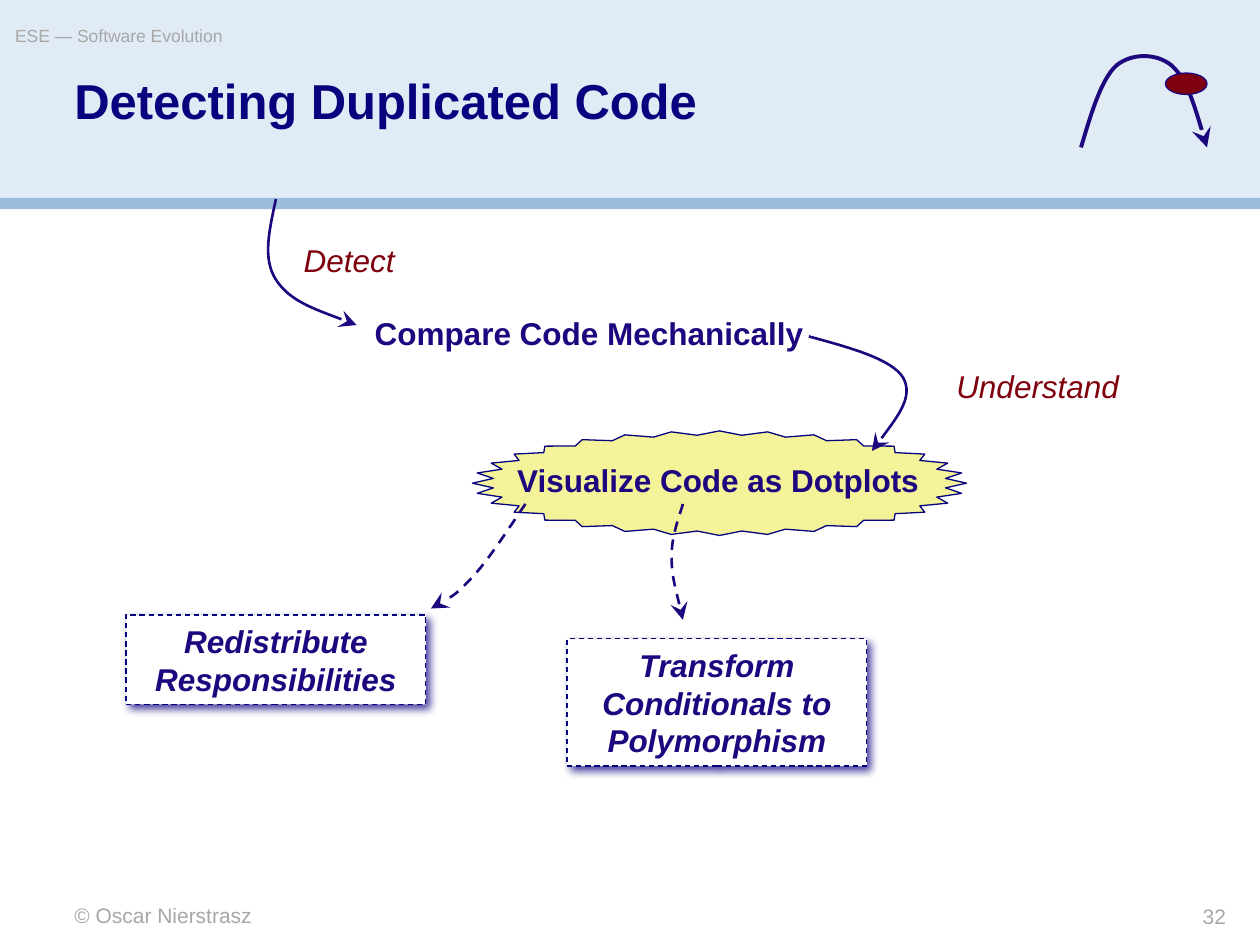
from lxml.etree import SubElement
from pptx import Presentation
from pptx.dml.color import RGBColor
from pptx.enum.dml import MSO_LINE
from pptx.enum.shapes import MSO_SHAPE
from pptx.enum.text import MSO_ANCHOR, MSO_AUTO_SIZE, PP_ALIGN
from pptx.oxml.ns import qn
from pptx.util import Cm, Pt

COLORS = {
    "header": "E1EBF5", "rule": "9CBDDE", "star": "F5F399", "paper": "FFFFFF",
    "edge": "05027D", "title": "0A017F", "ink": "1E067F", "red": "7F010D",
    "gray": "A7A7A7",
}
CM_PER_INCH = 2.54

BANDS = [("header", (0, 0, 10, 1.58)), ("rule", (0, 1.57, 10, 0.09))]
TITLE = ("Detecting Duplicated Code", (0.59, 0.61, 8.83, 0.89))
STAR = (3.75, 3.42, 3.92, 0.83)
DOT = (9.25, 0.58, 0.33, 0.17)

STYLES = {
    "running": dict(size=10, color="gray", inset=False, wrap=False),
    "footer": dict(size=12, color="gray", inset=False),
    "number": dict(size=12, color="gray", inset=False, align=PP_ALIGN.RIGHT),
    "title": dict(size=28, color="title", bold=True, inset=False, spacing=0.9),
    "step": dict(size=18, color="ink", bold=True, wrap=False, grow=True,
                 align=PP_ALIGN.CENTER, anchor=MSO_ANCHOR.MIDDLE),
    "phase": dict(size=18, color="red", italic=True, wrap=False, grow=True,
                  align=PP_ALIGN.RIGHT, anchor=MSO_ANCHOR.MIDDLE),
    "outcome": dict(size=18, color="ink", bold=True, italic=True, grow=True,
                    align=PP_ALIGN.CENTER, anchor=MSO_ANCHOR.MIDDLE),
}
LABELS = [
    ("running", "ESE — Software Evolution", (0.12, 0.2, 5.9, 0.28)),
    ("footer", "© Oscar Nierstrasz", (0.59, 7.16, 4.17, 0.2)),
    ("number", "32", (8.25, 7.17, 1.48, 0.2)),
    ("step", "Compare Code Mechanically", (2.87, 2.44, 3.61, 0.4)),
    ("step", "Visualize Code as Dotplots", (4, 3.61, 3.4, 0.4)),
    ("phase", "Detect", (2.31, 1.86, 0.92, 0.4)),
    ("phase", "Understand", (7.49, 2.86, 1.49, 0.4)),
]
OUTCOMES = [
    ("Redistribute Responsibilities", (1, 4.88, 2.38, 0.71)),
    ("Transform Conditionals to Polymorphism", (4.5, 5.07, 2.38, 1.01)),
]
ARROWS = [
    (1.5, False, [(2.19, 1.58), (2.14, 1.82), (2.08, 2.05), (2.19, 2.22),
                  (2.3, 2.39), (2.57, 2.48), (2.83, 2.58)]),
    (1.5, False, [(6.42, 2.67), (6.75, 2.76), (7.08, 2.85), (7.17, 3),
                  (7.25, 3.15), (7.08, 3.37), (6.92, 3.58)]),
    (1.5, True, [(4.17, 4), (4.02, 4.22), (3.88, 4.44), (3.75, 4.58),
                 (3.62, 4.72), (3.52, 4.78), (3.42, 4.83)]),
    (1.5, True, [(5.42, 4), (5.38, 4.13), (5.33, 4.26), (5.33, 4.42),
                 (5.33, 4.57), (5.38, 4.74), (5.42, 4.92)]),
    (2.25, False, [(8.58, 1.17), (8.66, 0.9), (8.74, 0.63), (8.86, 0.52),
                   (8.98, 0.42), (9.18, 0.42), (9.3, 0.52),
                   (9.42, 0.63), (9.5, 0.9), (9.58, 1.17)]),
]


def rgb(name):
    return RGBColor.from_string(COLORS[name])


def lengths(values):
    return [Cm(v * CM_PER_INCH) for v in values]


def set_line(shape, color, width, dashed=False):
    shape.line.color.rgb = rgb(color)
    shape.line.width = Pt(width)
    if dashed:
        shape.line.dash_style = MSO_LINE.DASH


def add_shape(s, kind, box, fill, edge=None, dashed=False):
    sp = s.shapes.add_shape(kind, *lengths(box))
    sp.shadow.inherit = False
    sp.fill.solid()
    sp.fill.fore_color.rgb = rgb(fill)
    if edge:
        set_line(sp, edge, 0.75, dashed)
    else:
        sp.line.fill.background()
    return sp


def write(sp, text, size, color, bold=False, italic=False, inset=True, wrap=True,
          grow=False, align=PP_ALIGN.LEFT, anchor=MSO_ANCHOR.TOP, spacing=None):
    tf = sp.text_frame
    fit = MSO_AUTO_SIZE.SHAPE_TO_FIT_TEXT if grow else MSO_AUTO_SIZE.NONE
    frame = dict(word_wrap=wrap, vertical_anchor=anchor, auto_size=fit)
    if not inset:
        frame.update(margin_left=0, margin_right=0, margin_top=0, margin_bottom=0)
    for name, value in frame.items():
        setattr(tf, name, value)
    p = tf.paragraphs[0]
    p.alignment, p.line_spacing = align, spacing
    r = p.add_run()
    r.text = text
    for name, value in dict(name="Arial", size=Pt(size), bold=bold, italic=italic).items():
        setattr(r.font, name, value)
    r.font.color.rgb = rgb(color)


def add_shadow(sp):
    effects = sp._element.spPr.find(qn("a:effectLst"))
    shadow = SubElement(effects, qn("a:outerShdw"), blurRad=str(Pt(5)),
                        dist=str(Pt(3)), dir=str(45 * 60000), rotWithShape="0")
    color = SubElement(shadow, qn("a:srgbClr"), val=COLORS["title"])
    SubElement(color, qn("a:alpha"), val="75000")


def bend(sp):
    outline = next(sp._element.iter(qn("a:path")))
    segments = outline.findall(qn("a:lnTo"))
    for i in range(0, len(segments), 3):
        cubic = SubElement(outline, qn("a:cubicBezTo"))
        for segment in segments[i:i + 3]:
            cubic.append(segment[0])
            outline.remove(segment)


def add_arrow(s, width, dashed, points):
    start, *rest = map(lengths, points)
    builder = s.shapes.build_freeform(*start)
    builder.add_line_segments(rest, close=False)
    sp = builder.convert_to_shape()
    bend(sp)
    sp.shadow.inherit = False
    sp.fill.background()
    set_line(sp, "ink", width, dashed)
    SubElement(sp.line._get_or_add_ln(), qn("a:tailEnd"),
               type="stealth", w="lg", len="lg")


def main():
    prs = Presentation()
    prs.slide_width, prs.slide_height = lengths((10, 7.5))
    s = prs.slides.add_slide(prs.slide_layouts[5])

    for fill, box in BANDS:
        add_shape(s, MSO_SHAPE.RECTANGLE, box, fill)

    text, box = TITLE
    title = s.shapes.title
    title.left, title.top, title.width, title.height = lengths(box)
    write(title, text, **STYLES["title"])
    s.shapes._spTree.append(title._element)

    star = add_shape(s, MSO_SHAPE.STAR_32_POINT, STAR, "star", "edge")
    star.adjustments[0] = 0.46

    for style, text, box in LABELS:
        write(s.shapes.add_textbox(*lengths(box)), text, **STYLES[style])

    for text, box in OUTCOMES:
        sp = add_shape(s, MSO_SHAPE.RECTANGLE, box, "paper", "edge", True)
        add_shadow(sp)
        write(sp, text, **STYLES["outcome"])

    for arrow in ARROWS:
        add_arrow(s, *arrow)
    add_shape(s, MSO_SHAPE.OVAL, DOT, "red", "ink")

    prs.save("out.pptx")


if __name__ == "__main__":
    main()
